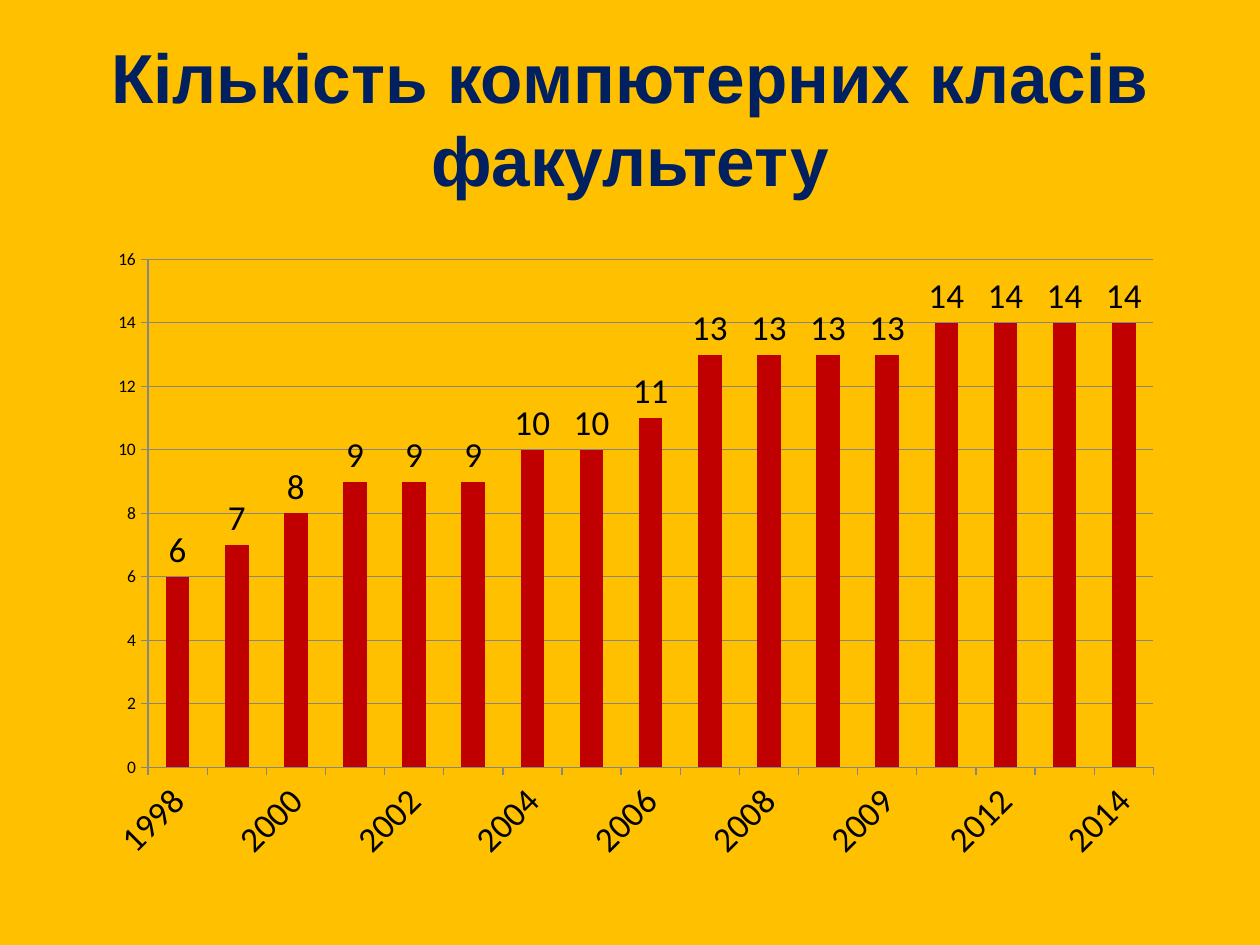
import pptx
import pptx.chart.data
import pptx.dml.color
import pptx.enum.chart
import pptx.enum.text
import pptx.oxml
import pptx.util

EMU_PER_PX = 914400 / 126
BACKGROUND = pptx.dml.color.RGBColor(0xFF, 0xC0, 0x00)
NAVY = pptx.dml.color.RGBColor(0x00, 0x20, 0x60)
RED = pptx.dml.color.RGBColor(0xC0, 0x00, 0x00)
GRAY = pptx.dml.color.RGBColor(0x86, 0x86, 0x86)
BLACK = pptx.dml.color.RGBColor(0x00, 0x00, 0x00)

CLASSROOMS = [
    ("1998", 6), ("1999", 7), ("2000", 8), ("2001", 9), ("2002", 9),
    ("2003", 9), ("2004", 10), ("2005", 10), ("2006", 11), ("2007", 13),
    ("2008", 13), ("2010", 13), ("2009", 13), ("2011", 14), ("2012", 14),
    ("2013", 14), ("2014", 14),
]


def px(length):
    return pptx.util.Emu(round(length * EMU_PER_PX))


def add_title(slide, left, top, width, height):
    shape = slide.shapes.add_textbox(px(left), px(top), px(width), px(height))
    text_frame = shape.text_frame
    text_frame.word_wrap = True
    text_frame.vertical_anchor = pptx.enum.text.MSO_ANCHOR.MIDDLE
    text_frame.text = "Кількість компютерних класів факультету"
    paragraph = text_frame.paragraphs[0]
    paragraph.alignment = pptx.enum.text.PP_ALIGN.CENTER
    font = paragraph.runs[0].font
    font.name = "Arial"
    font.size = pptx.util.Pt(39.6)
    font.bold = True
    font.color.rgb = NAVY


def style_font(font, size):
    font.name = "Calibri"
    font.size = pptx.util.Pt(size)
    font.color.rgb = BLACK


def style_axis(axis, size):
    axis.major_tick_mark = pptx.enum.chart.XL_TICK_MARK.OUTSIDE
    axis.minor_tick_mark = pptx.enum.chart.XL_TICK_MARK.NONE
    style_font(axis.tick_labels.font, size)
    style_line(axis.format.line)


def style_line(line):
    line.color.rgb = GRAY
    line.width = pptx.util.Pt(0.75)


def place_plot(chart, left, top, width, height):
    plot_area = chart.plots[0]._element.getparent()
    for old_layout in plot_area.xpath("c:layout"):
        plot_area.remove(old_layout)
    settings = [("layoutTarget", "inner"), ("xMode", "edge"), ("yMode", "edge"),
                ("x", left), ("y", top), ("w", width), ("h", height)]
    values = "".join(f'<c:{name} val="{value}"/>' for name, value in settings)
    namespace = "http://schemas.openxmlformats.org/drawingml/2006/chart"
    plot_area.insert(0, pptx.oxml.parse_xml(
        f'<c:layout xmlns:c="{namespace}"><c:manualLayout>{values}</c:manualLayout></c:layout>'))


def add_classroom_chart(slide, left, top, width, height):
    data = pptx.chart.data.CategoryChartData()
    data.categories = [year for year, count in CLASSROOMS]
    data.add_series("Series 1", [count for year, count in CLASSROOMS])
    chart = slide.shapes.add_chart(
        pptx.enum.chart.XL_CHART_TYPE.COLUMN_CLUSTERED,
        px(left), px(top), px(width), px(height), data).chart
    chart.has_legend = False
    chart.has_title = False
    style_font(chart.font, 10)

    plot = chart.plots[0]
    plot.gap_width = 150
    plot.vary_by_categories = False
    series = plot.series[0]
    series.format.fill.solid()
    series.format.fill.fore_color.rgb = RED
    labels = series.data_labels
    labels.show_value = True
    labels.position = pptx.enum.chart.XL_LABEL_POSITION.OUTSIDE_END
    style_font(labels.font, 20)

    style_axis(chart.category_axis, 20)
    category_text = chart.category_axis._element.xpath("c:txPr/a:bodyPr")[0]
    category_text.set("rot", "-2700000")
    category_text.set("vert", "horz")

    value_axis = chart.value_axis
    style_axis(value_axis, 10)
    value_axis.minimum_scale = 0
    value_axis.maximum_scale = 16
    value_axis.major_unit = 2
    value_axis.has_major_gridlines = True
    style_line(value_axis.major_gridlines.format.line)
    place_plot(chart, 0.05, 0.04, 0.93, 0.8)


def main():
    presentation = pptx.Presentation()
    presentation.slide_width = px(1260)
    presentation.slide_height = px(945)
    slide = presentation.slides.add_slide(presentation.slide_layouts[6])
    slide.background.fill.solid()
    slide.background.fill.fore_color.rgb = BACKGROUND
    add_title(slide, 63, 38, 1134, 158)
    add_classroom_chart(slide, 94, 234, 1081, 635)
    presentation.save("out.pptx")


if __name__ == "__main__":
    main()
